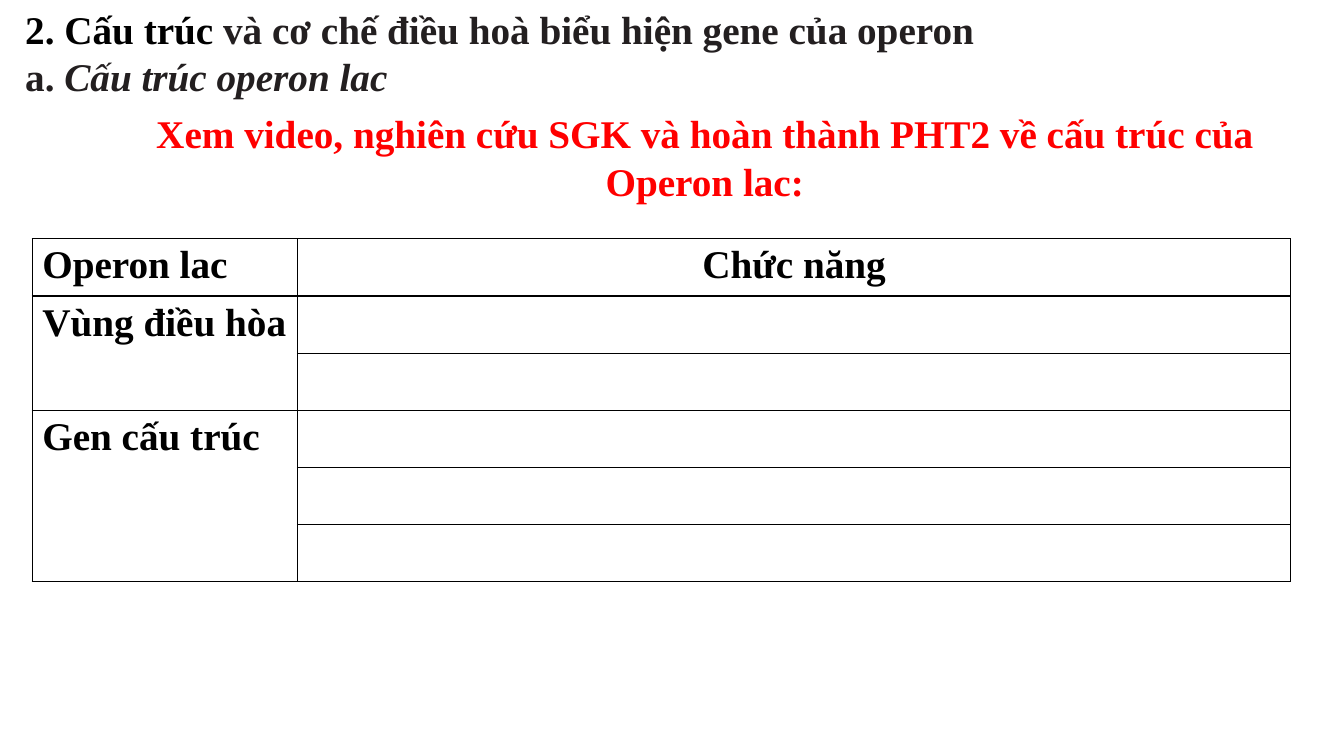
from lxml.etree import SubElement
from pptx import Presentation
from pptx.dml.color import RGBColor
from pptx.enum.text import MSO_ANCHOR, MSO_AUTO_SIZE, PP_ALIGN
from pptx.oxml.ns import qn
from pptx.util import Inches, Pt

BLACK = RGBColor(0x00, 0x00, 0x00)
CHARCOAL = RGBColor(0x23, 0x1F, 0x20)
RED = RGBColor(0xFF, 0x00, 0x00)
WHITE = RGBColor(0xFF, 0xFF, 0xFF)
FONT = "Times New Roman"


def add_span(para, text, color=BLACK, italic=False, align=PP_ALIGN.LEFT):
    """Append one bold run to a paragraph and align the paragraph."""
    para.alignment = align
    span = para.add_run()
    span.text = text
    span.font.name = FONT
    span.font.size = Pt(28)
    span.font.bold = True
    span.font.italic = italic
    span.font.color.rgb = color


def place(shape, left, top, width, height):
    """Place a text shape and make its text wrap from the top."""
    shape.left, shape.top = Inches(left), Inches(top)
    shape.width, shape.height = Inches(width), Inches(height)
    frame = shape.text_frame
    frame.word_wrap = True
    frame.auto_size = MSO_AUTO_SIZE.SHAPE_TO_FIT_TEXT
    frame.vertical_anchor = MSO_ANCHOR.TOP
    return frame


def add_heading(page, left, top, width, height):
    """Fill the title with the section and subsection headings."""
    frame = place(page.shapes.title, left, top, width, height)
    section = frame.paragraphs[0]
    add_span(section, "2. Cấu trúc ")
    add_span(section, "và cơ chế điều hoà biểu hiện gene của operon", CHARCOAL)
    subsection = frame.add_paragraph()
    add_span(subsection, "a. ", CHARCOAL)
    add_span(subsection, "Cấu trúc operon lac", CHARCOAL, italic=True)


def add_task(page, left, top, width, height):
    """Add the centred red instruction."""
    box = page.shapes.add_textbox(0, 0, 0, 0)
    frame = place(box, left, top, width, height)
    add_span(
        frame.paragraphs[0],
        "Xem video, nghiên cứu SGK và hoàn thành PHT2 về cấu trúc của Operon lac:",
        RED,
        align=PP_ALIGN.CENTER,
    )


def style_cell(cell):
    """Give a cell thin black borders and a white fill."""
    properties = cell._tc.get_or_add_tcPr()
    for side in ("a:lnL", "a:lnR", "a:lnT", "a:lnB"):
        line = SubElement(properties, qn(side), w=str(Pt(1)))
        fill = SubElement(line, qn("a:solidFill"))
        SubElement(fill, qn("a:srgbClr"), val=str(BLACK))
    cell.fill.solid()
    cell.fill.fore_color.rgb = WHITE


def add_worksheet(page, left, top, width, height):
    """Add the table of operon parts with blank function cells."""
    groups = [("Operon lac", 1), ("Vùng điều hòa", 2), ("Gen cấu trúc", 3)]
    row_count = sum(size for _, size in groups)
    table = page.shapes.add_table(
        row_count, 2, Inches(left), Inches(top), Inches(width), Inches(height)
    ).table
    table.first_row = table.horz_banding = False
    label_width = 2.63
    table.columns[0].width = Inches(label_width)
    table.columns[1].width = Inches(width - label_width)
    for row in table.rows:
        row.height = Inches(height / row_count)
        for cell in row.cells:
            style_cell(cell)
    first = 0
    for label, size in groups:
        cell = table.cell(first, 0)
        if size > 1:
            cell.merge(table.cell(first + size - 1, 0))
        add_span(cell.text_frame.paragraphs[0], label)
        first += size
    header = table.cell(0, 1).text_frame.paragraphs[0]
    add_span(header, "Chức năng", align=PP_ALIGN.CENTER)


def main():
    """Build and save the slide."""
    deck = Presentation()
    deck.slide_width, deck.slide_height = Inches(13.33), Inches(7.5)
    page = deck.slides.add_slide(deck.slide_layouts.get_by_name("Title Only"))
    add_heading(page, 0.15, 0, 11.45, 1.04)
    add_task(page, 1.08, 1.04, 11.82, 1.04)
    add_worksheet(page, 0.32, 2.37, 12.48, 3.4)
    deck.save("out.pptx")


if __name__ == "__main__":
    main()
